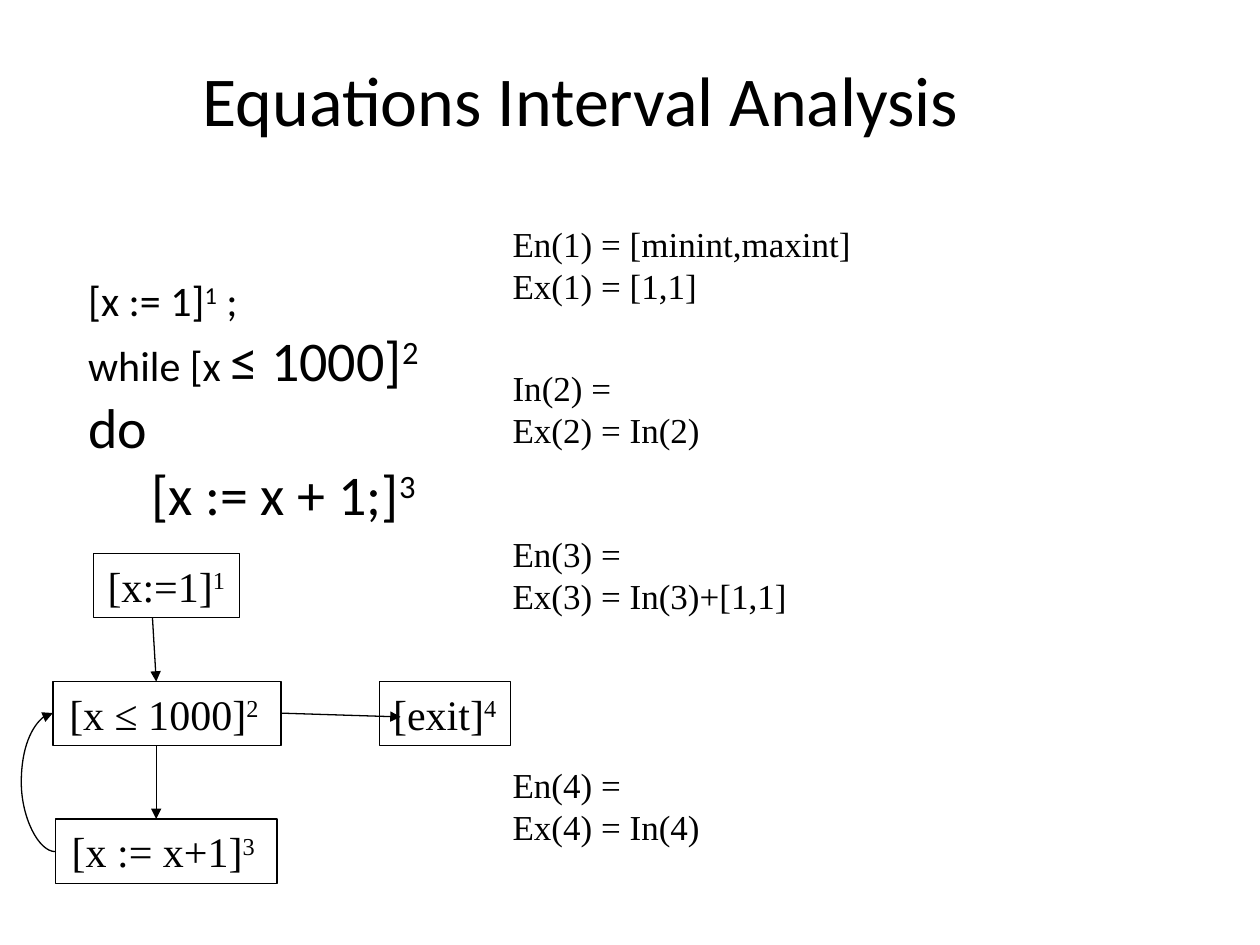
from lxml.etree import SubElement
from pptx import Presentation
from pptx.dml.color import RGBColor as RGB
from pptx.enum.shapes import MSO_CONNECTOR as CONN, MSO_SHAPE as SHAPE
from pptx.enum.text import MSO_ANCHOR as ANCHOR, MSO_AUTO_SIZE as FIT, PP_ALIGN as ALIGN
from pptx.oxml.ns import qn
from pptx.util import Inches, Pt

COLORS = {"ink": "000000"}
SANS, SERIF = "Calibri", "Times New Roman"


def assign(obj, values):
    for name, value in values.items():
        setattr(obj, name, value)


class Slide:
    def __init__(self, prs):
        self.s = prs.slides.add_slide(prs.slide_layouts[6])
        self.ink = RGB.from_string(COLORS["ink"])
        self.width = Pt(0.75)

    def fill_text(self, tf, paras, font, size, frame, para):
        assign(tf, frame)
        for i, runs in enumerate(paras):
            p = tf.paragraphs[0] if i == 0 else tf.add_paragraph()
            assign(p, para)
            for text, fmt in runs:
                r = p.add_run()
                r.text = text
                assign(r.font, {"name": font, "size": Pt(fmt.get("size", size))})
                r.font.color.rgb = self.ink
                if fmt.get("sup"):
                    r._r.get_or_add_rPr().set("baseline", "30000")

    def text(self, box, paras, font, size, frame=None, para=None):
        sp = self.s.shapes.add_textbox(*map(Inches, box))
        self.fill_text(sp.text_frame, paras, font, size,
                       {"word_wrap": True, **(frame or {})}, para or {})
        return sp.text_frame

    def equations(self, top, *lines):
        self.text((3.97, top, 5.8, 0.77), [[(line, {})] for line in lines],
                  SERIF, 20, {"auto_size": FIT.SHAPE_TO_FIT_TEXT})

    def node(self, left, top, width, label, number):
        sp = self.s.shapes.add_shape(SHAPE.RECTANGLE, *map(Inches, (left, top, width, 0.51)))
        sp.shadow.inherit = False
        sp.fill.background()
        sp.line.color.rgb = self.ink
        sp.line.width = self.width
        self.fill_text(sp.text_frame, [[(label, {}), (number, {"sup": True})]], SERIF, 24,
                       {"word_wrap": False, "auto_size": FIT.SHAPE_TO_FIT_TEXT,
                        "vertical_anchor": ANCHOR.MIDDLE},
                       {"alignment": ALIGN.CENTER})

    def arrow(self, start, end, kind=CONN.STRAIGHT, bend=None):
        c = self.s.shapes.add_connector(kind, *map(Inches, start + end))
        c.line.color.rgb = self.ink
        c.line.width = self.width
        sp_pr = c._element.spPr
        SubElement(sp_pr.find(qn("a:ln")), qn("a:tailEnd"), type="triangle")
        SubElement(sp_pr, qn("a:effectLst"))
        if bend is not None:
            ratio = (start[0] - bend) / (start[0] - end[0])
            guides = sp_pr.find(qn("a:prstGeom")).get_or_add_avLst()
            SubElement(guides, qn("a:gd"), name="adj1", fmla=f"val {round(ratio * 100000)}")


def main():
    prs = Presentation()
    prs.slide_width, prs.slide_height = Inches(10), Inches(7.5)
    s = Slide(prs)

    s.text((0.42, 0.32, 8.5, 0.93), [[("Equations Interval Analysis ", {})]], SANS, 40,
           {"vertical_anchor": ANCHOR.MIDDLE}, {"alignment": ALIGN.CENTER})

    big, sup = {"size": 32}, {"size": 32, "sup": True}
    program = [
        [("[x := 1]", {}), ("1", {"sup": True}), (" ;", {})],
        [("while [x ", {}), ("≤ 1000]", big), ("2", sup), (" do", big)],
        [("[x := x + 1;]", big), ("3", sup)],
    ]
    tf = s.text((0.22, 1.72, 3.65, 2.07), program, SANS, 24,
                {"margin_top": Inches(0.46), "margin_left": Inches(0.48)})
    tf.paragraphs[-1]._p.get_or_add_pPr().set("marL", str(Inches(0.5)))

    for top, *lines in (
        (1.72, "En(1) = [minint,maxint]", "Ex(1) = [1,1]"),
        (2.86, "In(2) =", "Ex(2) = In(2)"),
        (4.18, "En(3) =", "Ex(3) = In(3)+[1,1]"),
        (6.01, "En(4) =", "Ex(4) = In(4)"),
    ):
        s.equations(top, *lines)

    for node in (
        (0.74, 4.39, 1.16, "[x:=1]", "1"),
        (0.42, 5.41, 1.81, "[x ≤ 1000]", "2 "),
        (0.44, 6.5, 1.76, "[x := x+1]", "3 "),
        (3.01, 5.41, 1.04, "[exit]", "4"),
    ):
        s.node(*node)

    s.arrow((1.21, 4.9), (1.24, 5.41))
    s.arrow((1.24, 5.92), (1.24, 6.5))
    s.arrow((2.23, 5.66), (3.18, 5.69))
    s.arrow((0.44, 6.76), (0.42, 5.66), CONN.CURVE, bend=0.17)

    prs.save("out.pptx")


if __name__ == "__main__":
    main()
